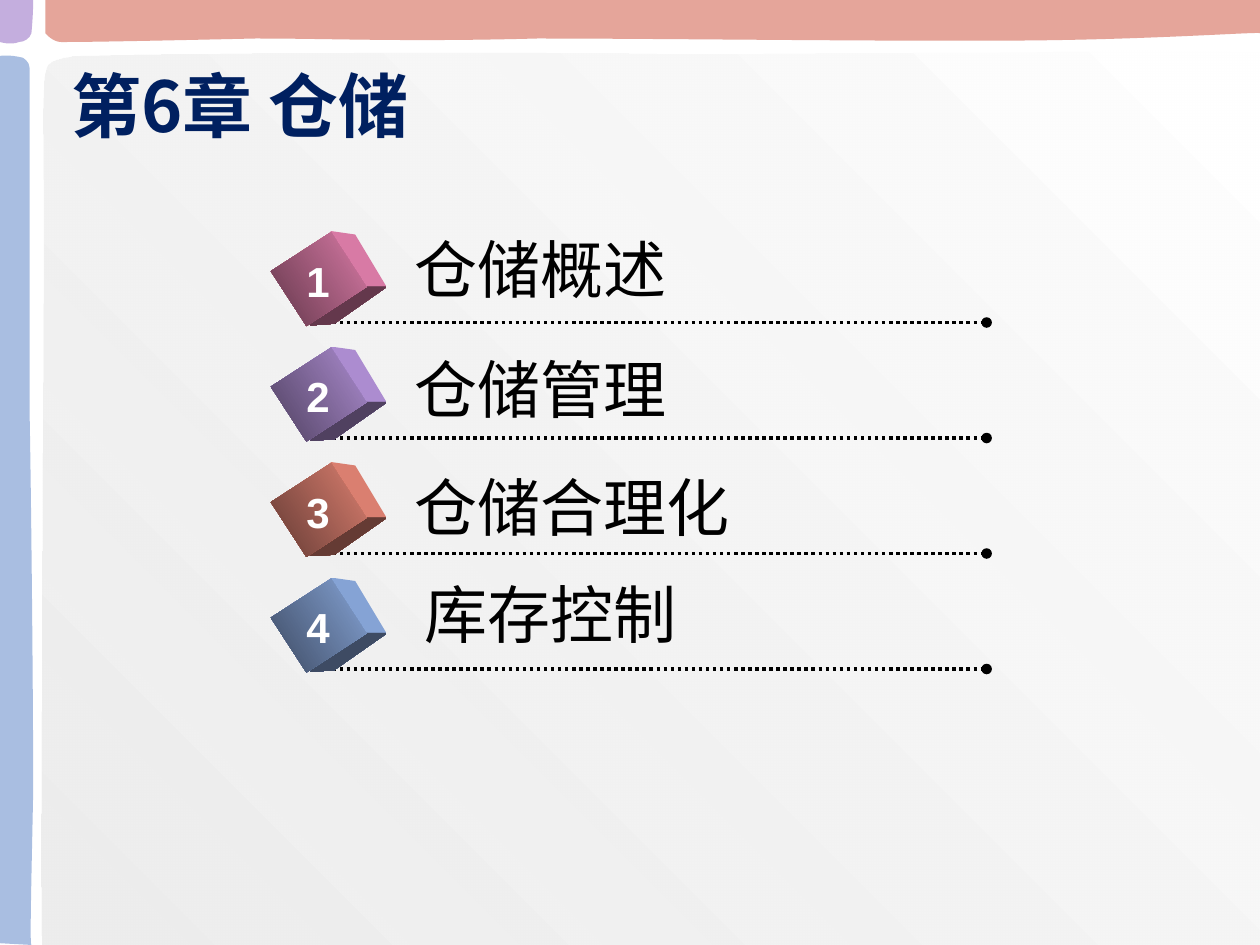
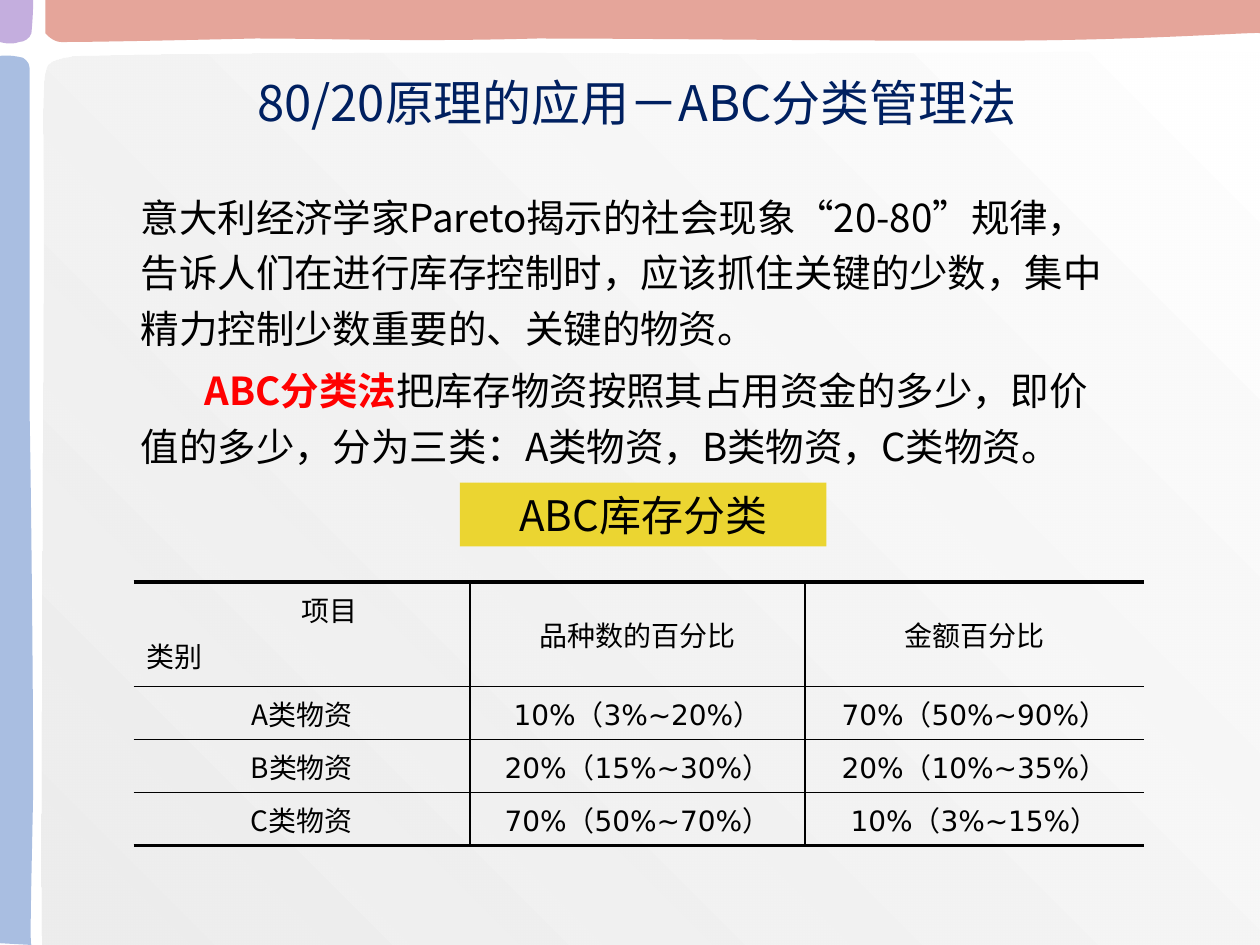
"""Build two slides on warehousing: a chapter outline and the ABC method."""
from lxml import etree
from pptx import Presentation
from pptx.dml.color import RGBColor
from pptx.enum import dml, shapes, text
from pptx.oxml.ns import qn
from pptx.util import Pt

NAVY = RGBColor(0x00, 0x20, 0x60)
BLACK = RGBColor(0, 0, 0)
WHITE = RGBColor(255, 255, 255)
RED = RGBColor(255, 0, 0)
GREY = RGBColor(0xE6, 0xE6, 0xE6)
GOLD = RGBColor(0xEB, 0xD5, 0x31)
ROSE = RGBColor(0xD8, 0x7A, 0xA5)
PLUM = RGBColor(0xAC, 0x8C, 0xD0)
CORAL = RGBColor(0xDA, 0x7F, 0x70)
BLUE = RGBColor(0x85, 0xA3, 0xD5)
DARK = {
    ROSE: RGBColor(0x64, 0x38, 0x4C),
    PLUM: RGBColor(0x50, 0x41, 0x60),
    CORAL: RGBColor(0x65, 0x3B, 0x34),
    BLUE: RGBColor(0x3E, 0x4B, 0x63),
}
SC, JP = "Noto Sans CJK SC", "Noto Sans CJK JP"
SANS = "DejaVu Sans"
LEFT, MID = text.PP_ALIGN.LEFT, text.PP_ALIGN.CENTER


def style(par, size, face, color=BLACK, bold=False, align=LEFT):
    """Format a paragraph and all its runs."""
    par.alignment = align
    for run in par.runs:
        font = run.font
        font.size, font.bold, font.name = Pt(size), bold, face
        font.color.rgb = color
        east = etree.SubElement(font._element, qn("a:ea"))
        east.set("typeface", face)


def draw(slide, start, steps, color):
    """Draw a closed outline of straight steps (x, y) and cubic curves."""
    pen = slide.shapes.build_freeform(*start, scale=Pt(1))
    for step in steps:
        pen.add_line_segments(list(zip(step[::2], step[1::2])), close=False)
    pen.add_line_segments([], close=True)
    shape = pen.convert_to_shape()
    lines = iter(list(shape.element.iter(qn("a:lnTo"))))
    for step in steps:
        legs = [next(lines) for _ in step[::2]]
        if len(legs) == 3:
            curve = etree.Element(qn("a:cubicBezTo"))
            legs[0].addprevious(curve)
            for leg in legs:
                curve.append(leg[0])
                leg.getparent().remove(leg)
    shape.shadow.inherit = False
    shape.line.fill.background()
    shape.fill.solid()
    shape.fill.fore_color.rgb = color
    return shape


deck = Presentation()
deck.slide_width, deck.slide_height = Pt(720), Pt(540)
plain = deck.slide_layouts[5]
plan, abc = [deck.slides.add_slide(plain) for _ in range(2)]

FRAME = [
    (GREY, (720, 540), [
        (720, 30.2), (637.9, 27.4, 615.6, 30.2, 547.2, 30.2),
        (479.5, 30.2, 396, 31, 311.8, 30.2), (227.5, 29.5, 88.6, 29.5, 41, 32.4),
        (25.9, 34.6, 25.9, 35.3, 25.2, 52.6), (24.5, 69.1, 25.2, 79.2, 25.2, 131),
        (25.2, 184.3, 24.5, 296.6, 24.5, 364.3), (24.5, 432.7, 23, 476.6, 23.8, 540)]),
    (CORAL, (720, 0), [
        (720, 18.7), (720.7, 18, 668.2, 22.3, 599, 23),
        (529.9, 23.8, 382.3, 21.6, 306.7, 22.3), (231.1, 23.8, 190.8, 22.3, 146.2, 22.3),
        (100.8, 23, 55.4, 24.5, 35.3, 24.5), (29.5, 24.5, 25.9, 19.4, 25.9, 19.4),
        (25.9, 0)]),
    (BLUE, (0, 539.3), [
        (18, 540), (17.3, 540.7, 18, 502.6, 18.7, 452.2),
        (18.7, 401.8, 18, 293, 17.3, 237.6), (16.6, 182.9, 17.3, 152.6, 17.3, 120.2),
        (17.3, 87.1, 16.6, 54, 16.6, 38.9), (16.6, 34.6, 13, 33.1, 13, 33.1),
        (5, 31, 0, 31.7, 0, 31.7)]),
    (PLUM, (0, 0), [
        (18.7, 0), (19.4, 8.6, 18, 18.7, 18, 18.7),
        (16.6, 22.3, 13.7, 23.8, 10.8, 24.5), (5.8, 25.9, 0, 24.5, 0, 24.5)]),
]
first = deck.slide_master.shapes[0].element
for color, start, steps in FRAME:
    band = draw(plan, start, steps, color)
    if color == GREY:
        band.fill.gradient()
        band.fill.gradient_angle = 45
        for stop, tone in zip(band.fill.gradient_stops, (GREY, WHITE)):
            stop.color.rgb = tone
    tint = next(band.element.iter(qn("a:srgbClr")))
    etree.SubElement(tint, qn("a:alpha")).set("val", "70000")
    first.addprevious(band.element)

TITLES = [
    (plan, "第6章 仓储", (33.8, 22.5, 530, 74.2), 40, True, LEFT),
    (abc, "80/20原理的应用－ABC分类管理法", (73, 39, 581.8, 38.2), 28, False, MID),
]
for slide, words, place, size, bold, align in TITLES:
    title = slide.shapes.title
    title.left, title.top, title.width, title.height = map(Pt, place)
    frame = title.text_frame
    frame.text = words
    frame.auto_size = text.MSO_AUTO_SIZE.NONE
    frame.vertical_anchor = text.MSO_ANCHOR.MIDDLE
    style(frame.paragraphs[0], size, JP, NAVY, bold, align)

ITEMS = [
    ("仓储概述", ROSE, 229.7, 128.2),
    ("仓储管理", PLUM, 229.7, 196.6),
    ("仓储合理化", CORAL, 229.7, 264.2),
    ("库存控制", BLUE, 235.4, 325.4),
]
for i, (name, color, left, high) in enumerate(ITEMS):
    top = 139 + 66 * i
    rule = plan.shapes.add_connector(
        shapes.MSO_CONNECTOR.STRAIGHT, Pt(186), Pt(top + 45.3), Pt(563.8), Pt(top + 45.3))
    rule.line.color.rgb = BLACK
    rule.line.width = Pt(2)
    rule.line.dash_style = dml.MSO_LINE.ROUND_DOT
    etree.SubElement(rule.line._ln, qn("a:tailEnd")).set("type", "oval")
    etree.SubElement(rule.element.spPr, qn("a:effectLst"))

    cube = draw(plan, (189.1, top - 7), [
        (202.9, top - 5.3), (221.1, top + 25), (191.4, top + 45.6), (176.6, top + 47.3)], color)
    face = plan.shapes.add_shape(
        shapes.MSO_SHAPE.RECTANGLE, Pt(163.4), Pt(top), Pt(37.4), Pt(41))
    face.rotation = 57
    face.shadow.inherit = False
    face.line.fill.background()
    for part, spots in ((cube, (0.58, 0.59)), (face, (0, 1))):
        part.fill.gradient()
        part.fill.gradient_angle = 270
        for stop, tone, spot in zip(part.fill.gradient_stops, (color, DARK[color]), spots):
            stop.color.rgb = tone
            stop.position = spot

    num = plan.shapes.add_textbox(Pt(167.8), Pt(top + 3.4), Pt(28), Pt(36))
    num.text_frame.text = str(i + 1)
    style(num.text_frame.paragraphs[0], 24, "Arial", WHITE, True, MID)
    label = plan.shapes.add_textbox(Pt(left), Pt(high), Pt(36 * len(name) + 15), Pt(51))
    label.text_frame.text = name
    style(label.text_frame.paragraphs[0], 36, SC)
    for box in (num, label):
        box.text_frame.word_wrap = False

body = abc.shapes.add_textbox(Pt(46), Pt(102), Pt(600.5), Pt(184)).text_frame
body.word_wrap = True
body.text = ("意大利经济学家Pareto揭示的社会现象“20-80”规律，告诉人们在进行库存控制时，"
             "应该抓住关键的少数，集中精力控制少数重要的、关键的物资。")
more = body.add_paragraph()
more.text = "ABC分类法"
more.add_run().text = "把库存物资按照其占用资金的多少，即价值的多少，分为三类：A类物资，B类物资，C类物资。"
for par, indent in zip(body.paragraphs, (0, 36.5)):
    props = par._p.get_or_add_pPr()
    props.set("marL", str(Pt(27.4)))
    props.set("indent", str(Pt(indent)))
    par.line_spacing = 1.2
    style(par, 22, SC)
more.space_before = Pt(4)
key = more.runs[0].font
key.bold = True
key.color.rgb = RED

ROWS = [
    ("项目\n类别", "品种数的百分比", "金额百分比"),
    ("A类物资", "10%（3%~20%）", "70%（50%~90%）"),
    ("B类物资", "20%（15%~30%）", "20%（10%~35%）"),
    ("C类物资", "70%（50%~70%）", "10%（3%~15%）"),
]
grid = abc.shapes.add_table(4, 3, Pt(76.3), Pt(332.6), Pt(577.5), Pt(150.7)).table
grid.first_row = grid.horz_banding = False
for col, width in zip(grid.columns, (192.2, 191.5, 193.7)):
    col.width = Pt(width)
for row, height in zip(grid.rows, (59.8, 30.3, 30.3, 30.3)):
    row.height = Pt(height)
for r, row in enumerate(ROWS):
    for c, words in enumerate(row):
        cell = grid.cell(r, c)
        cell.text_frame.text = words
        corner = r == c == 0
        face = SC if r and not c else SANS
        cell.vertical_anchor = text.MSO_ANCHOR.TOP if corner else text.MSO_ANCHOR.MIDDLE
        if face == SANS:
            cell.margin_top = Pt(7.6 if corner else 6.8)
        for par in cell.text_frame.paragraphs:
            style(par, 16, face, align=LEFT if corner else MID)
        props = cell._tc.get_or_add_tcPr()
        sides = {"L": 1 if c else 0, "R": 1 if c < 2 else 0,
                 "T": 1 if r else 2.25, "B": 1 if r < 3 else 2.25}
        for k, (side, width) in enumerate(sides.items()):
            edge = etree.Element(qn("a:ln" + side), w=str(Pt(width)))
            if width:
                fill = etree.SubElement(edge, qn("a:solidFill"))
                etree.SubElement(fill, qn("a:srgbClr")).set("val", str(BLACK))
            else:
                etree.SubElement(edge, qn("a:noFill"))
            props.insert(k, edge)
        cell.fill.background()
item, kind = grid.cell(0, 0).text_frame.paragraphs
item._p.get_or_add_pPr().set("marL", str(Pt(89)))
kind.space_before = Pt(7.8)

tag = abc.shapes.add_shape(
    shapes.MSO_SHAPE.RECTANGLE, Pt(262.8), Pt(275.8), Pt(209.5), Pt(36.4))
tag.shadow.inherit = False
tag.line.fill.background()
tag.fill.solid()
tag.fill.fore_color.rgb = GOLD
tag.text_frame.text = "ABC库存分类"
style(tag.text_frame.paragraphs[0], 24, SC, align=MID)

deck.save("out.pptx")
